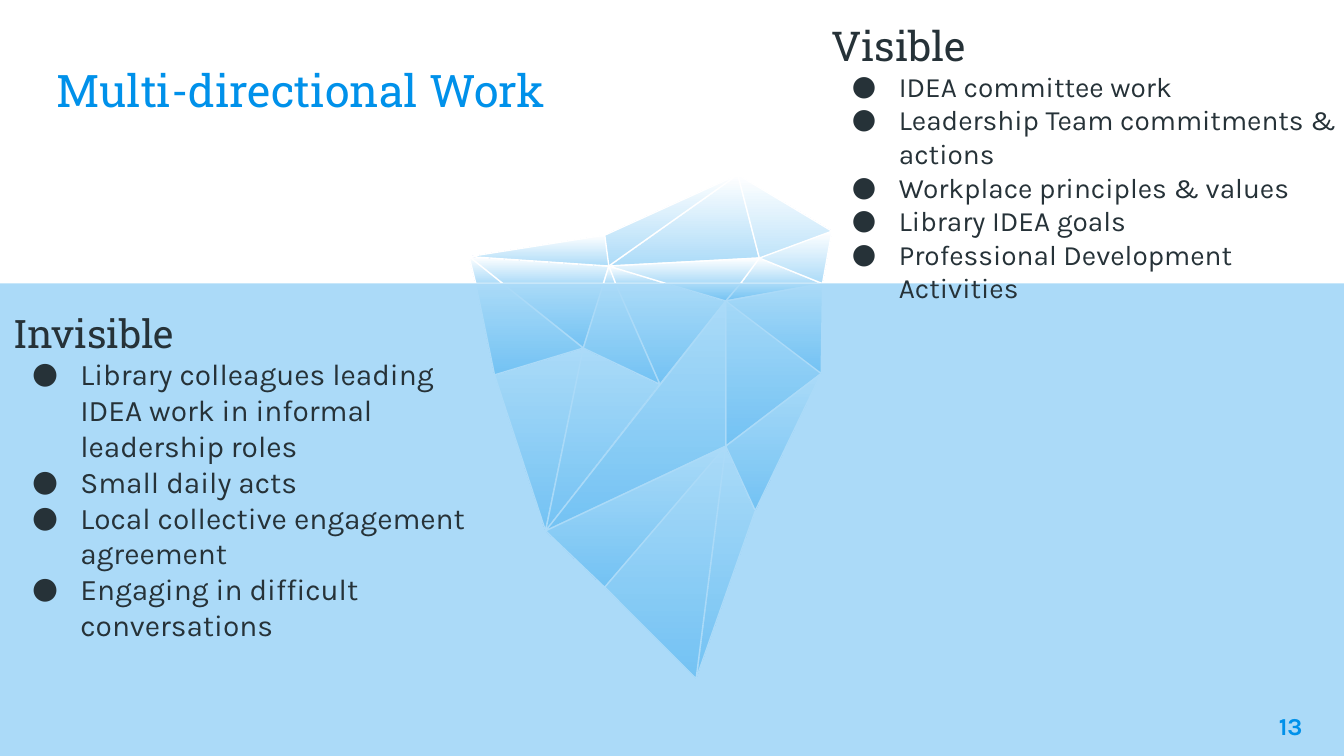
from lxml import etree
from pptx import Presentation
from pptx.dml.color import RGBColor
from pptx.enum.shapes import MSO_SHAPE
from pptx.enum.text import MSO_ANCHOR, PP_ALIGN
from pptx.oxml.ns import qn
from pptx.util import Inches, Pt

RECTANGLE = MSO_SHAPE.RECTANGLE
TOP, BOTTOM = MSO_ANCHOR.TOP, MSO_ANCHOR.BOTTOM
LEFT, RIGHT = PP_ALIGN.LEFT, PP_ALIGN.RIGHT

WHITE = RGBColor(0xFF, 0xFF, 0xFF)
ICE = RGBColor(0xAC, 0xDB, 0xF8)
BLUE = RGBColor(0x00, 0x91, 0xEA)
INK = RGBColor(0x26, 0x32, 0x38)

SERIF, SANS = "Roboto Slab", "Karla"
PAGE_WIDTH = Inches(10)
PAGE_HEIGHT = PAGE_WIDTH * 9 // 16
WATERLINE = 2.11

# Corners of the iceberg, from the peak down to the lowest tip
CORNERS = {
    "A": (5.49, 1.30), "B": (6.19, 1.72), "C": (4.50, 1.75), "D": (3.49, 1.91),
    "E": (5.65, 1.92), "F": (4.53, 1.98),
    "G": (3.54, WATERLINE), "H": (3.74, WATERLINE), "I": (4.49, WATERLINE),
    "J": (4.58, WATERLINE), "K": (4.96, WATERLINE), "L": (5.51, WATERLINE),
    "M": (6.12, WATERLINE),
    "N": (5.40, 2.24), "O": (4.34, 2.59), "P": (6.11, 2.78), "Q": (3.68, 2.79),
    "R": (4.91, 2.86), "S": (5.40, 3.32), "T": (5.62, 3.80), "U": (4.06, 3.95),
    "V": (4.50, 4.37), "W": (5.18, 5.05),
}

# Facets from back to front, each a chain of corners
FACETS = (
    "MDH AFE ABME DHG FIHD AFDC EML JFK DHG CFD BEM JFI MPSN OUQ IOH STW "
    "MNL RJKN ROU NUS HOQG MNP ORJI USV VWS PTS FELK NLK"
).split()

INVISIBLE_ITEMS = [
    "Library colleagues leading IDEA work in informal leadership roles",
    "Small daily acts",
    "Local collective engagement agreement",
    "Engaging in difficult conversations",
]
VISIBLE_ITEMS = [
    "IDEA committee work",
    "Leadership Team commitments & actions",
    "Workplace principles & values",
    "Library IDEA goals",
    "Professional Development Activities",
]


def add_box(page, left, top, width, height, inset=0.1, anchor=TOP):
    box = page.shapes.add_textbox(Inches(left), Inches(top), Inches(width), Inches(height))
    frame = box.text_frame
    frame.word_wrap = True
    frame.vertical_anchor = anchor
    frame.margin_left = frame.margin_right = Inches(0.1)
    frame.margin_top = frame.margin_bottom = Inches(inset)
    return frame


def write(para, text, size, font=SANS, color=INK, bold=False, align=LEFT):
    para.alignment = align
    span = para.add_run()
    span.text = text
    span.font.size = Pt(size)
    span.font.name = font
    span.font.color.rgb = color
    span.font.bold = bold


def add_bullet(para, hang):
    properties = para._p.get_or_add_pPr()
    properties.set("marL", str(Inches(0.5)))
    properties.set("indent", str(-Inches(hang)))
    color = etree.SubElement(properties, qn("a:buClr"))
    etree.SubElement(color, qn("a:srgbClr")).set("val", str(INK))
    etree.SubElement(properties, qn("a:buFont")).set("typeface", SANS)
    etree.SubElement(properties, qn("a:buChar")).set("char", "●")


def add_list(page, place, heading, items, heading_size, item_size, hang):
    frame = add_box(page, *place, inset=0.05)
    write(frame.paragraphs[0], heading, heading_size, font=SERIF)
    for item in items:
        para = frame.add_paragraph()
        add_bullet(para, hang)
        write(para, item, item_size)


def add_facet(page, corners):
    start, *others = [
        (Inches(x), Inches(y)) for x, y in (CORNERS[name] for name in corners)
    ]
    outline = page.shapes.build_freeform(*start)
    outline.add_line_segments(others, close=True)
    facet = outline.convert_to_shape()
    facet.shadow.inherit = False
    facet.fill.gradient()
    facet.fill.gradient_angle = 270
    for stop, color in zip(facet.fill.gradient_stops, (WHITE, ICE)):
        stop.color.rgb = color
    facet.line.color.rgb = WHITE
    facet.line.width = Pt(0.75)


def add_sea(page):
    surface = Inches(WATERLINE)
    sea = page.shapes.add_shape(
        RECTANGLE, 0, surface, PAGE_WIDTH, PAGE_HEIGHT - surface)
    sea.shadow.inherit = False
    sea.fill.solid()
    sea.fill.fore_color.rgb = BLUE
    sea.line.fill.background()
    tint = sea._element.spPr.find(qn("a:solidFill")).find(qn("a:srgbClr"))
    etree.SubElement(tint, qn("a:alpha")).set("val", "33000")


def main():
    deck = Presentation()
    deck.slide_width, deck.slide_height = PAGE_WIDTH, PAGE_HEIGHT
    page = deck.slides.add_slide(deck.slide_layouts[6])

    # Iceberg, with the translucent sea over its lower part
    for corners in FACETS:
        add_facet(page, corners)

    # Title
    title = add_box(page, 0.32, 0.2, 8.28, 0.77, anchor=BOTTOM)
    write(title.paragraphs[0], "Multi-directional Work", 24, font=SERIF, color=BLUE)

    add_sea(page)

    # Lists below and above the water
    add_list(page, (0, 2.25, 3.6, 2.65), "Invisible", INVISIBLE_ITEMS, 21, 16, 0.36)
    add_list(page, (6.09, 0.1, 4.03, 2.8), "Visible", VISIBLE_ITEMS, 22, 15, 0.35)

    # Page number
    number = add_box(page, 9.19, 5.19, 0.6, 0.43)
    write(number.paragraphs[0], "13", 13, color=BLUE, bold=True, align=RIGHT)

    deck.save("out.pptx")


if __name__ == "__main__":
    main()
